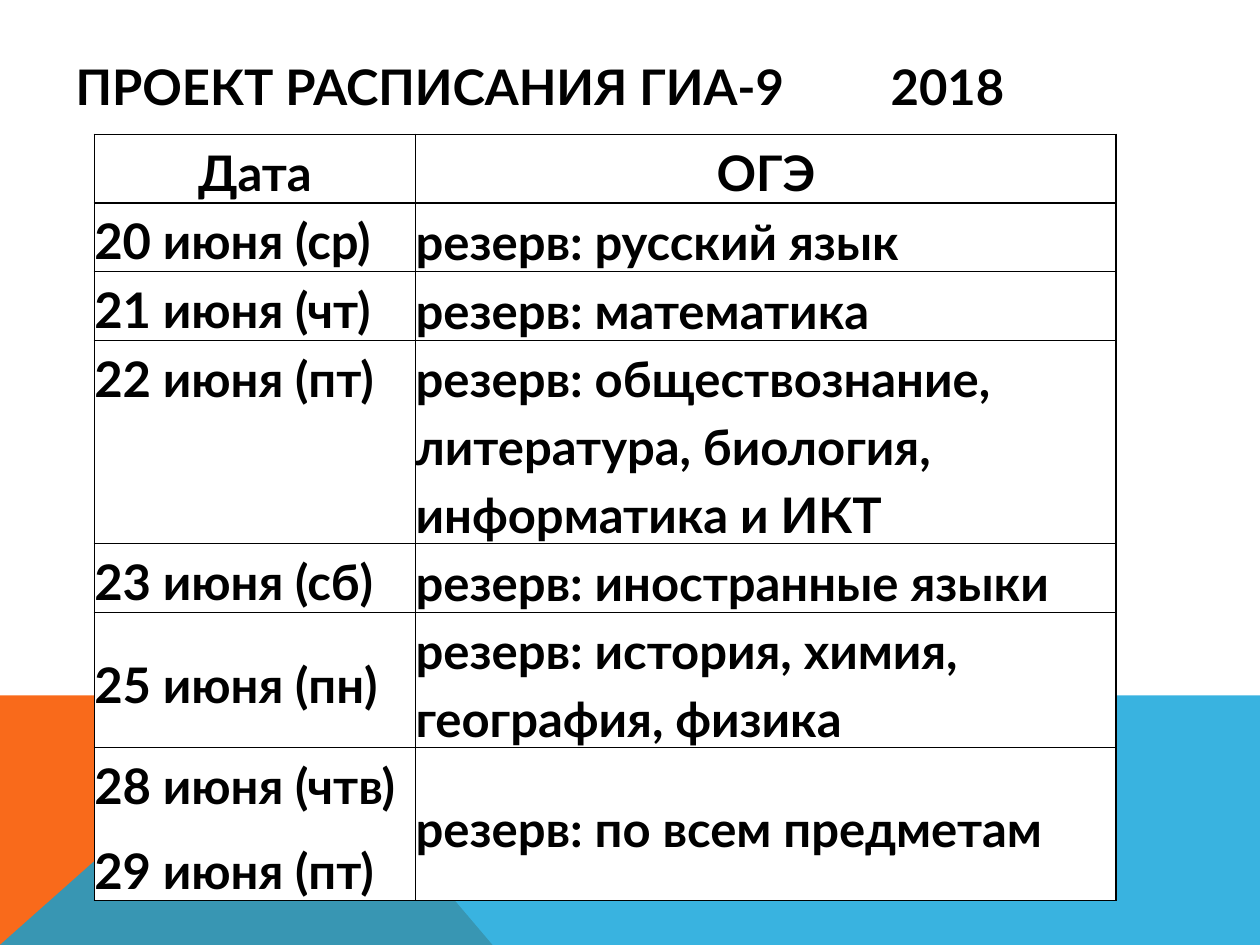
from lxml import etree
from pptx import Presentation
from pptx import util as u
from pptx.dml.color import RGBColor
from pptx.enum import text
from pptx.oxml import ns

TITLE = ("ПРОЕКТ РАСПИСАНИЯ ГИА-9", "2018")
HEADINGS = ("Дата", "ОГЭ")
# dates, subjects, row height in cm, dates centred vertically
SCHEDULE = [
    (["20 июня (ср)"], "резерв: русский язык", 1.39, False),
    (["21 июня (чт)"], "резерв: математика", 1.39, False),
    (["22 июня (пт)"], "резерв: обществознание, литература, биология, информатика и ИКТ",
     4.09, False),
    (["23 июня (сб)"], "резерв: иностранные языки", 1.39, False),
    (["25 июня (пн)"], "резерв: история, химия, география, физика", 2.72, True),
    (["28 июня (чтв)", "29 июня (пт)"], "резерв: по всем предметам", 3.08, True),
]
HEADING_HEIGHT = 1.38
COLUMN_WIDTHS = (6.48, 14.12)
YEAR_TAB = 16.43
THEME = {
    "font": "Lato", "size": u.Pt(28), "ink": "000000", "paper": "FFFFFF",
    "orange": "F96A1B", "blue": "08A1D9", "blue_alpha": 80,
    "border": u.Pt(1), "line_spacing": 1.15, "space_after": u.Pt(10),
}
WIDTH, HEIGHT = 25.4, 19.05
BAND_TOP, PEAK, ORANGE_FOOT = 14.02, 5.66, 9.93
BANDS = [
    ([(0, HEIGHT), (0, BAND_TOP), (PEAK, BAND_TOP), (ORANGE_FOOT, HEIGHT)], "orange", 100),
    ([(0, HEIGHT), (PEAK, BAND_TOP), (WIDTH, BAND_TOP), (WIDTH, HEIGHT)],
     "blue", THEME["blue_alpha"]),
]


def colour(name):
    return RGBColor.from_string(THEME[name])


def add_run(paragraph, words):
    run = paragraph.add_run()
    run.text = words
    run.font.name = THEME["font"]
    run.font.size = THEME["size"]
    run.font.bold = True
    run.font.color.rgb = colour("ink")


def add_band(slide, corners, fill, opacity):
    points = [(u.Cm(x), u.Cm(y)) for x, y in corners]
    outline = slide.shapes.build_freeform(*points[0], scale=1.0)
    outline.add_line_segments(points[1:], close=True)
    band = outline.convert_to_shape()
    band.shadow.inherit = False
    band.line.fill.background()
    band.fill.solid()
    band.fill.fore_color.rgb = colour(fill)
    if opacity < 100:
        tint = band.fill._xPr.find(".//" + ns.qn("a:srgbClr"))
        etree.SubElement(tint, ns.qn("a:alpha"), val=str(opacity * 1000))


def write_title(slide):
    title = slide.shapes.title
    title.left, title.top, title.width, title.height = map(u.Cm, (1.27, 0.76, 22.86, 1.96))
    frame = title.text_frame
    frame.auto_size = text.MSO_AUTO_SIZE.NONE
    frame.vertical_anchor = text.MSO_ANCHOR.MIDDLE
    line = frame.paragraphs[0]
    line.alignment = text.PP_ALIGN.LEFT
    stops = etree.SubElement(line._p.get_or_add_pPr(), ns.qn("a:tabLst"))
    etree.SubElement(stops, ns.qn("a:tab"), pos=str(u.Cm(YEAR_TAB)), algn="l")
    add_run(line, "\t".join(TITLE))


def add_borders(cell):
    properties = cell._tc.get_or_add_tcPr()
    for position, side in enumerate(("lnL", "lnR", "lnT", "lnB")):
        border = etree.Element(ns.qn("a:" + side), w=str(THEME["border"]))
        solid = etree.SubElement(border, ns.qn("a:solidFill"))
        etree.SubElement(solid, ns.qn("a:srgbClr"), val=THEME["ink"])
        properties.insert(position, border)


def write_cell(cell, lines, alignment, anchor):
    cell.margin_left = cell.margin_right = cell.margin_top = cell.margin_bottom = 0
    cell.vertical_anchor = anchor
    cell.fill.solid()
    cell.fill.fore_color.rgb = colour("paper")
    add_borders(cell)
    frame = cell.text_frame
    for index, words in enumerate(lines):
        paragraph = frame.add_paragraph() if index else frame.paragraphs[0]
        paragraph.alignment = alignment
        paragraph.line_spacing = THEME["line_spacing"]
        paragraph.space_after = THEME["space_after"]
        add_run(paragraph, words)


def add_schedule(slide):
    heights = [HEADING_HEIGHT] + [row[2] for row in SCHEDULE]
    table = slide.shapes.add_table(
        len(heights), len(COLUMN_WIDTHS), u.Cm(1.9), u.Cm(2.71),
        u.Cm(sum(COLUMN_WIDTHS)), u.Cm(sum(heights))).table
    for column, width in zip(table.columns, COLUMN_WIDTHS):
        column.width = u.Cm(width)
    for row, height in zip(table.rows, heights):
        row.height = u.Cm(height)

    top, middle = text.MSO_ANCHOR.TOP, text.MSO_ANCHOR.MIDDLE
    for column, heading in enumerate(HEADINGS):
        write_cell(table.cell(0, column), [heading], text.PP_ALIGN.CENTER, top)
    for row, (dates, subjects, _, centred) in enumerate(SCHEDULE, 1):
        write_cell(table.cell(row, 0), dates, text.PP_ALIGN.LEFT, middle if centred else top)
        write_cell(table.cell(row, 1), [subjects], text.PP_ALIGN.LEFT, middle)


def main():
    deck = Presentation()
    deck.slide_width, deck.slide_height = u.Cm(WIDTH), u.Cm(HEIGHT)
    slide = deck.slides.add_slide(deck.slide_layouts[5])
    for band in BANDS:
        add_band(slide, *band)
    write_title(slide)
    add_schedule(slide)
    deck.save("out.pptx")


if __name__ == "__main__":
    main()
